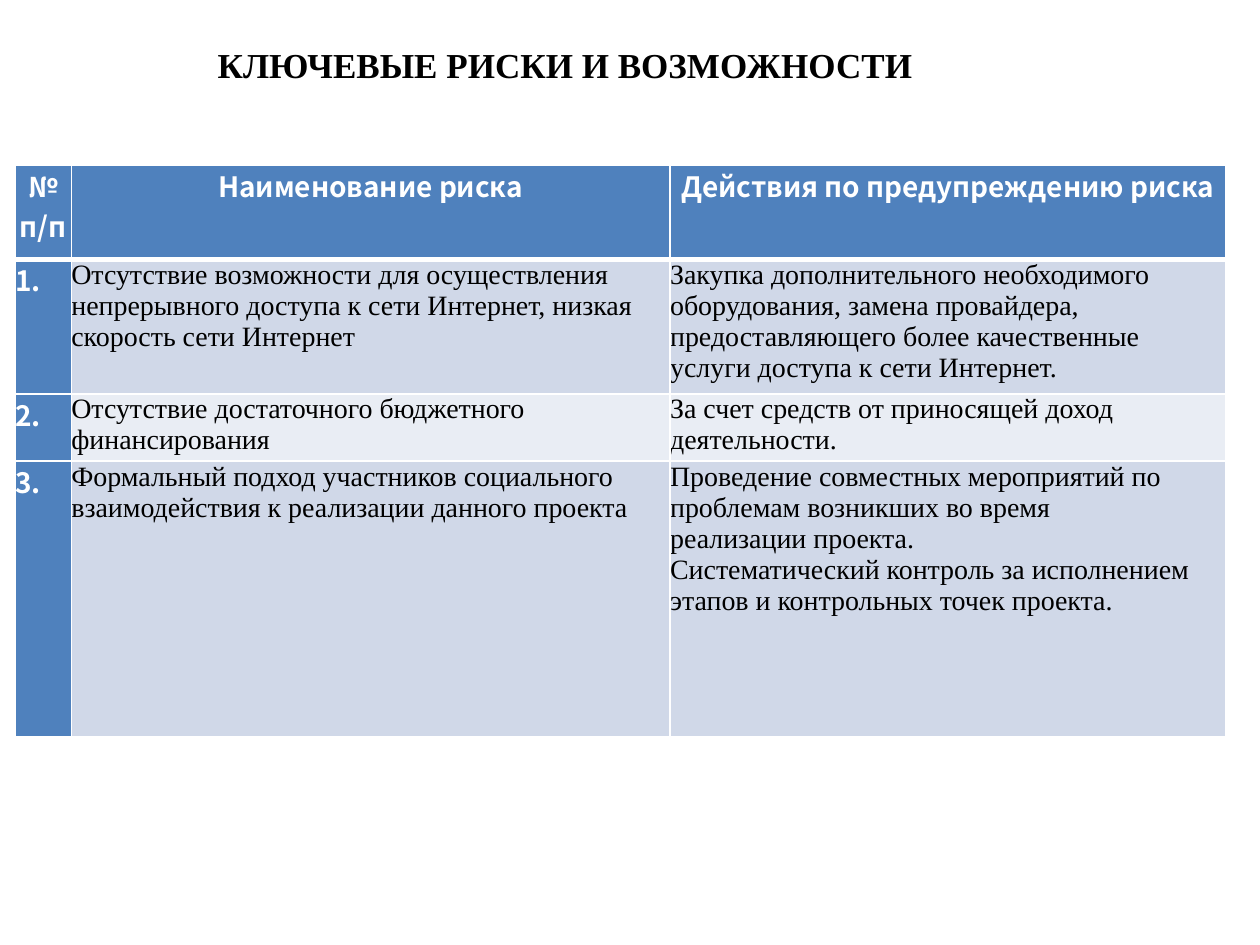
"""Build a slide with a table of key risks and preventive actions."""
from lxml import etree
from pptx import Presentation
from pptx.dml.color import RGBColor
from pptx.enum.text import MSO_ANCHOR, MSO_AUTO_SIZE, PP_ALIGN
from pptx.oxml.ns import qn
from pptx.util import Cm, Pt

CENTER, LEFT = PP_ALIGN.CENTER, PP_ALIGN.LEFT
MIDDLE = MSO_ANCHOR.MIDDLE
GROW = MSO_AUTO_SIZE.SHAPE_TO_FIT_TEXT
TITLE_ONLY = 5

WHITE, BLACK = "FFFFFF", "000000"
ACCENT, BAND_DARK, BAND_LIGHT = "4F81BD", "D0D8E8", "E9EDF4"
SERIF, SANS = "Times New Roman", "Noto Sans CJK KR"

TITLE = "КЛЮЧЕВЫЕ РИСКИ И ВОЗМОЖНОСТИ"
HEADINGS = ["№\nп/п", "Наименование риска", "Действия по предупреждению риска"]
RISKS = [
    ("Отсутствие возможности для осуществления\n"
     "непрерывного доступа к сети Интернет, низкая\n"
     "скорость сети Интернет",
     "Закупка дополнительного необходимого\n"
     "оборудования, замена провайдера,\n"
     "предоставляющего более качественные\n"
     "услуги доступа к сети Интернет."),
    ("Отсутствие достаточного бюджетного\n"
     "финансирования",
     "За счет средств от приносящей доход\n"
     "деятельности."),
    ("Формальный подход участников социального\n"
     "взаимодействия к реализации данного проекта",
     "Проведение совместных мероприятий по\n"
     "проблемам возникших во время\n"
     "реализации проекта.\n"
     "Систематический контроль за исполнением\n"
     "этапов и контрольных точек проекта."),
]
COLUMN_WIDTHS = [1.13, 12.07, 11.2]
ROW_HEIGHTS = [1.9, 2.7, 1.35, 5.56]


def color(value):
    return RGBColor.from_string(value)


class RiskSlide:
    title_font = {"name": SERIF, "size": Pt(20), "bold": True}
    label_font = {"name": SANS, "size": Pt(16), "bold": True}
    body_font = {"name": SERIF, "size": Pt(16), "bold": False}

    def __init__(self, presentation):
        layout = presentation.slide_layouts[TITLE_ONLY]
        self.slide = presentation.slides.add_slide(layout)

    def fill_text(self, frame, text, font, ink, align):
        frame.text = text
        for paragraph in frame.paragraphs:
            paragraph.alignment = align
            for run in paragraph.runs:
                for key, value in font.items():
                    setattr(run.font, key, value)
                run.font.color.rgb = color(ink)

    def title(self, text, left, top, width, height):
        heading = self.slide.shapes.title
        place = {"left": left, "top": top, "width": width, "height": height}
        for key, value in place.items():
            setattr(heading, key, Cm(value))
        heading.fill.solid()
        heading.fill.fore_color.rgb = color(WHITE)
        frame = heading.text_frame
        frame.word_wrap = True
        frame.auto_size = GROW
        frame.vertical_anchor = MIDDLE
        self.fill_text(frame, text, self.title_font, BLACK, CENTER)

    def borders(self, cell, bottom):
        properties = cell._tc.get_or_add_tcPr()
        for side, points in {"L": 1, "R": 1, "T": 1, "B": bottom}.items():
            line = etree.SubElement(properties, qn(f"a:ln{side}"), w=str(Pt(points)))
            fill = etree.SubElement(line, qn("a:solidFill"))
            etree.SubElement(fill, qn("a:srgbClr"), val=WHITE)

    def cell(self, cell, text, font, ink, align, fill, bottom=1):
        for side in ("left", "right", "top", "bottom"):
            setattr(cell, f"margin_{side}", 0)
        self.borders(cell, bottom)
        cell.fill.solid()
        cell.fill.fore_color.rgb = color(fill)
        self.fill_text(cell.text_frame, text, font, ink, align)

    def table(self, left, top):
        table = self.slide.shapes.add_table(
            len(ROW_HEIGHTS), len(COLUMN_WIDTHS), Cm(left), Cm(top),
            Cm(sum(COLUMN_WIDTHS)), Cm(sum(ROW_HEIGHTS))).table
        for column, width in zip(table.columns, COLUMN_WIDTHS):
            column.width = Cm(width)
        for row, height in zip(table.rows, ROW_HEIGHTS):
            row.height = Cm(height)
        for column, heading in enumerate(HEADINGS):
            self.cell(table.cell(0, column), heading, self.label_font,
                      WHITE, CENTER, ACCENT, bottom=3)
        for number, risk in enumerate(RISKS, start=1):
            band = BAND_DARK if number % 2 else BAND_LIGHT
            self.cell(table.cell(number, 0), f"{number}.", self.label_font,
                      WHITE, LEFT, ACCENT)
            for column, text in enumerate(risk, start=1):
                self.cell(table.cell(number, column), text, self.body_font,
                          BLACK, LEFT, band)


def main():
    presentation = Presentation()
    presentation.slide_width, presentation.slide_height = Cm(25.4), Cm(19.05)
    risks = RiskSlide(presentation)
    risks.title(TITLE, 2.69, 0.74, 17.4, 1.12)
    risks.table(0.31, 3.33)
    presentation.save("out.pptx")


if __name__ == "__main__":
    main()
